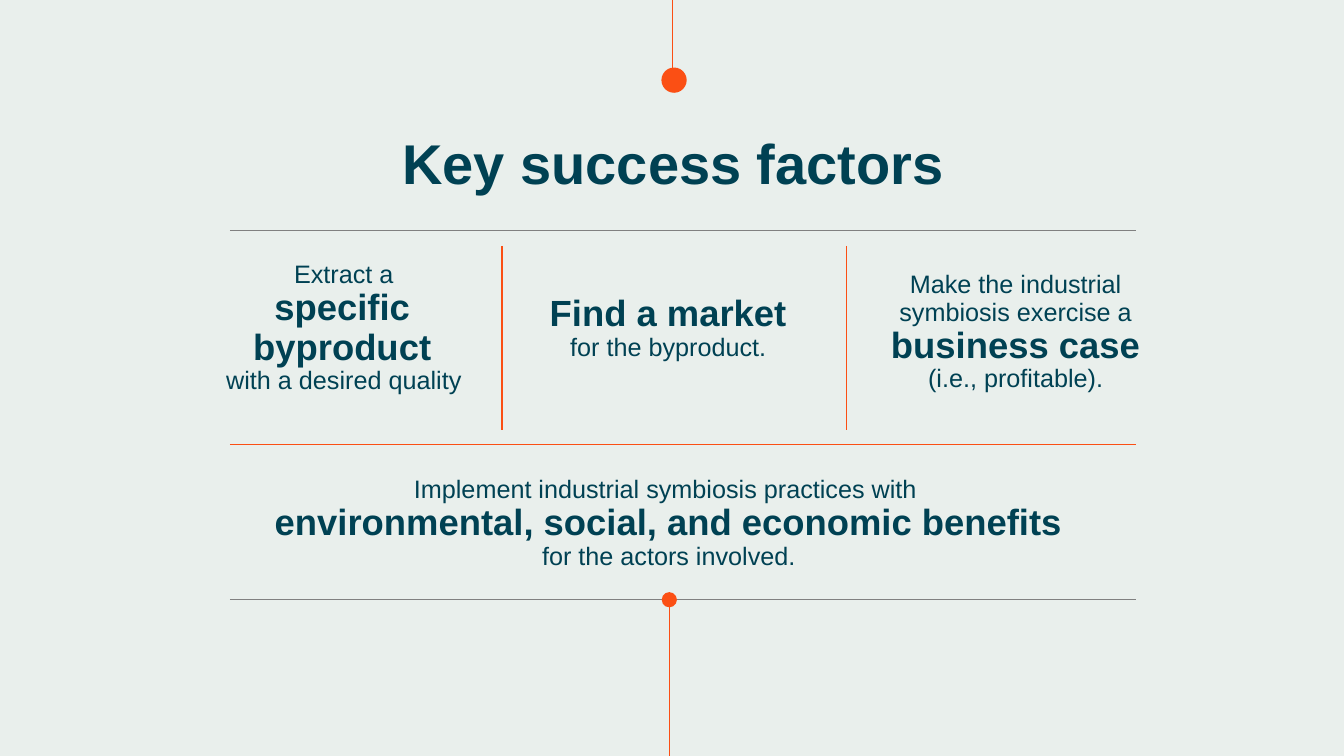
from lxml.etree import SubElement
from pptx import Presentation
from pptx.dml.color import RGBColor
from pptx.enum.shapes import MSO_CONNECTOR, MSO_SHAPE
from pptx.enum.text import MSO_ANCHOR, PP_ALIGN
from pptx.oxml.ns import qn
from pptx.util import Inches, Pt


def color(code):
    return RGBColor.from_string(code)


class SlideBuilder:
    font_name = "Arial"
    ink = "004153"
    accent = "FB4F14"
    rule = "808080"
    backdrop_fill = "B9CCC3"

    def __init__(self, presentation):
        self.width = presentation.slide_width
        self.height = presentation.slide_height
        self.slide = presentation.slides.add_slide(presentation.slide_layouts[5])

    def across(self, percent):
        return round(self.width * percent / 100)

    def down(self, percent):
        return round(self.height * percent / 100)

    def box(self, left, top, width, height):
        return self.across(left), self.down(top), self.across(width), self.down(height)

    def style_paragraph(self, paragraph, size, bold=False):
        paragraph.alignment = PP_ALIGN.CENTER
        paragraph.line_spacing = 0.9
        font = paragraph.font
        font.name, font.size, font.bold = self.font_name, Pt(size), bold
        font.color.rgb = color(self.ink)

    def preset(self, kind, place, fill):
        shape = self.slide.shapes.add_shape(kind, *place)
        shape.shadow.inherit = False
        shape.fill.solid()
        shape.fill.fore_color.rgb = color(fill)
        shape.line.fill.background()
        return shape

    def backdrop(self, opacity):
        shape = self.preset(MSO_SHAPE.RECTANGLE, self.box(0, 0, 100, 100), self.backdrop_fill)
        fill = shape.element.spPr.find(qn("a:solidFill"))
        SubElement(fill[0], qn("a:alpha"), val=str(opacity * 1000))
        self.slide.shapes.title.element.addprevious(shape.element)

    def title(self, text, *place):
        title = self.slide.shapes.title
        title.left, title.top, title.width, title.height = self.box(*place)
        frame = title.text_frame
        frame.text = text
        frame.vertical_anchor = MSO_ANCHOR.MIDDLE
        self.style_paragraph(frame.paragraphs[0], 40, True)

    def line(self, left, top, right, bottom, stroke=accent, weight=1):
        connector = self.slide.shapes.add_connector(
            MSO_CONNECTOR.STRAIGHT,
            self.across(left), self.down(top), self.across(right), self.down(bottom),
        )
        connector.line.color.rgb = color(stroke)
        connector.line.width = Pt(weight)
        SubElement(connector.element.spPr, qn("a:effectLst"))

    def dot(self, center_x, center_y, diameter):
        size = self.across(diameter)
        left = self.across(center_x) - size // 2
        top = self.down(center_y) - size // 2
        self.preset(MSO_SHAPE.OVAL, (left, top, size, size), self.accent)

    def factor(self, place, *pieces):
        frame = self.slide.shapes.add_textbox(*self.box(*place)).text_frame
        frame.word_wrap = True
        frame.margin_left = frame.margin_right = frame.margin_top = frame.margin_bottom = 0
        paragraph = frame.paragraphs[0]
        self.style_paragraph(paragraph, 18)
        for text, strong in pieces:
            for index, part in enumerate(text.split("\n")):
                if index:
                    paragraph.add_line_break()
                if part:
                    run = paragraph.add_run()
                    run.text = part
                    run.font.size = Pt(26 if strong else 18)
                    run.font.bold = strong


def main():
    presentation = Presentation()
    presentation.slide_width = Inches(13.33)
    presentation.slide_height = Inches(7.5)
    builder = SlideBuilder(presentation)

    builder.backdrop(31)
    builder.title("Key success factors", 28.2, 17.07, 43.73, 10)

    left, right = 17.1, 84.54
    first_row, second_row, end_row = 30.53, 58.8, 79.33
    builder.line(50.04, 0, 50.04, 10.6)
    builder.dot(50.15, 10.6, 1.88)
    for row in (first_row, end_row):
        builder.line(left, row, right, row, builder.rule, 0.75)
    builder.line(left, second_row, right, second_row)
    for column in (37.36, 63):
        builder.line(column, first_row + 2, column, second_row - 1.87)
    builder.line(49.8, end_row, 49.8, 100)
    builder.dot(49.8, end_row, 1.13)

    builder.factor(
        (15.23, 34.67, 21.23, 18.4),
        ("Extract a \n", False),
        ("specific \nbyproduct \n", True),
        ("with a desired quality ", False),
    )
    builder.factor(
        (39.9, 39.07, 19.65, 9.73),
        ("Find a market\n", True),
        ("for the byproduct.", False),
    )
    builder.factor(
        (64.88, 36, 21.38, 15.73),
        ("Make the industrial symbiosis exercise a ", False),
        ("business case ", True),
        ("(i.e., profitable).", False),
    )
    builder.factor(
        (19.2, 63.07, 61.13, 16.53),
        ("Implement industrial symbiosis practices with \n", False),
        ("environmental, social, and economic benefits\n", True),
        ("for the actors involved.", False),
    )
    presentation.save("out.pptx")


if __name__ == "__main__":
    main()
